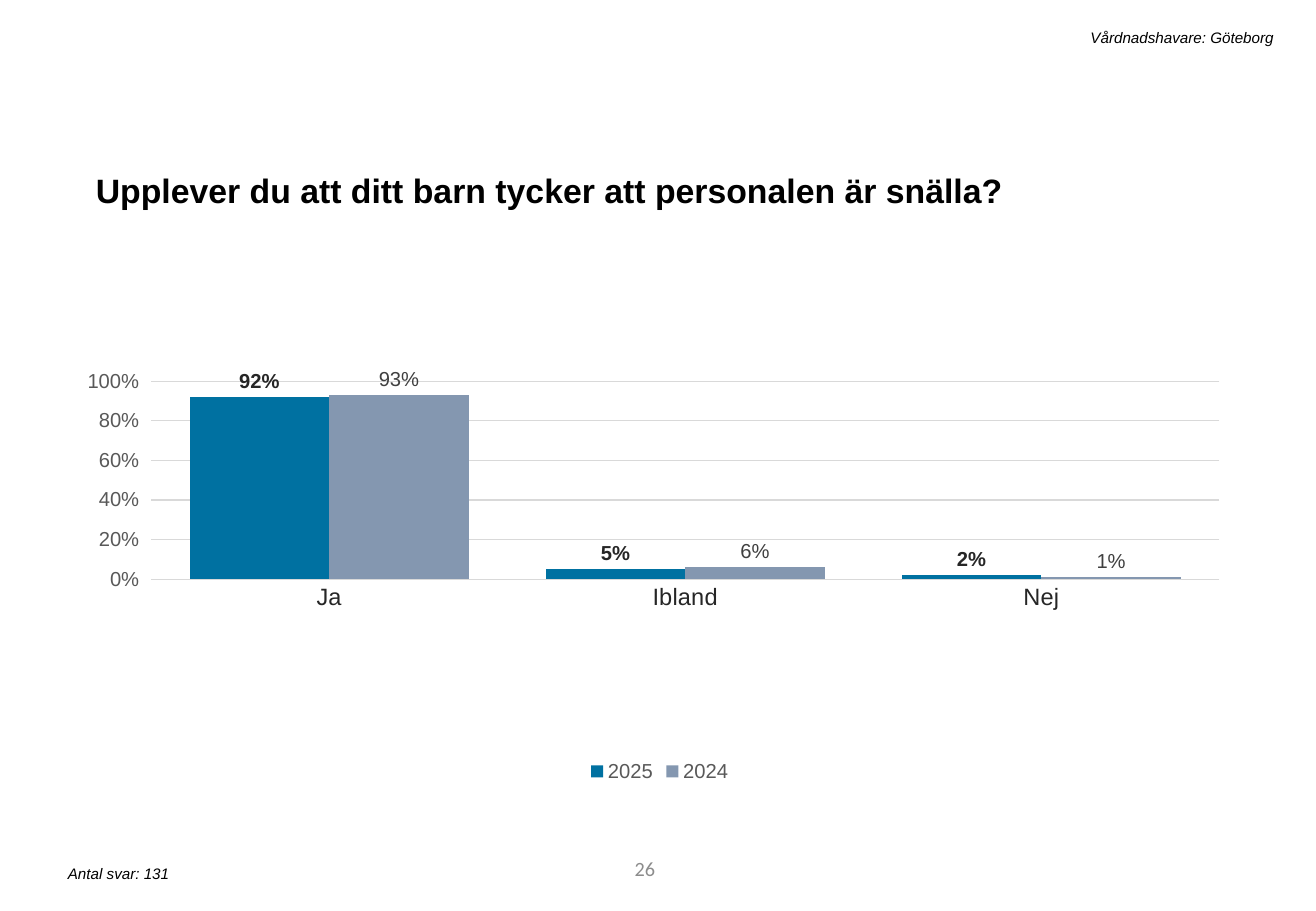
from dataclasses import dataclass

from lxml import etree
from pptx import Presentation
from pptx.chart.data import CategoryChartData
from pptx.dml.color import RGBColor
from pptx.enum.chart import XL_CHART_TYPE as ChartType
from pptx.enum.chart import XL_LABEL_POSITION as LabelPosition
from pptx.enum.chart import XL_LEGEND_POSITION as LegendPosition
from pptx.enum.chart import XL_TICK_MARK as TickMark
from pptx.enum.text import MSO_ANCHOR as Anchor
from pptx.enum.text import PP_ALIGN as Align
from pptx.oxml.ns import qn
from pptx.util import Inches, Pt


@dataclass(frozen=True)
class Theme:
    font: str = "Arial"
    number_font: str = "Calibri"
    black: str = "000000"
    dark: str = "262626"
    label: str = "404040"
    muted: str = "595959"
    page_number: str = "8C8C8C"
    grid: str = "D9D9D9"
    current_year: str = "0071A1"
    previous_year: str = "8497B0"
    title_size: int = 20
    category_size: int = 14
    chart_size: int = 12
    base_size: int = 10
    note_size: int = 9


THEME = Theme()
ANSWERS = ["Ja", "Ibland", "Nej"]
YEARS = [
    ("2025", [0.92, 0.05, 0.02], THEME.current_year, THEME.dark, True),
    ("2024", [0.93, 0.06, 0.01], THEME.previous_year, THEME.label, False),
]
PLOT_AREA = {"x": 0.054, "y": 0.154, "w": 0.937, "h": 0.413}


def style_font(font, size, color, name=THEME.font, bold=False, italic=False):
    font.name = name
    font.size = Pt(size)
    font.bold = bold
    font.italic = italic
    font.color.rgb = RGBColor.from_string(color)


def style_line(line):
    line.color.rgb = RGBColor.from_string(THEME.grid)
    line.width = Pt(0.75)


def add_text(page, area, text, size, color=THEME.black, align=Align.LEFT,
             anchor=Anchor.TOP, **style):
    box = page.shapes.add_textbox(*map(Inches, area))
    frame = box.text_frame
    frame.word_wrap = True
    frame.vertical_anchor = anchor
    para = frame.paragraphs[0]
    para.text = text
    para.alignment = align
    style_font(para.font, size, color, **style)
    return para


def place_plot(chart):
    plot_area = chart.plots[0]._element.getparent()
    for old_layout in plot_area.findall(qn("c:layout")):
        plot_area.remove(old_layout)
    layout = etree.Element(qn("c:layout"))
    plot_area.insert(0, layout)
    manual = etree.SubElement(layout, qn("c:manualLayout"))
    settings = {"layoutTarget": "inner", "xMode": "edge", "yMode": "edge", **PLOT_AREA}
    for tag, value in settings.items():
        etree.SubElement(manual, qn(f"c:{tag}")).set("val", str(value))


def style_axes(chart):
    answers = chart.category_axis
    answers.major_tick_mark = TickMark.NONE
    style_font(answers.tick_labels.font, THEME.category_size, THEME.dark)
    style_line(answers.format.line)

    shares = chart.value_axis
    shares.minimum_scale = 0
    shares.maximum_scale = 1
    shares.major_unit = 0.2
    shares.major_tick_mark = TickMark.OUTSIDE
    shares.tick_labels.number_format = "0%"
    shares.tick_labels.number_format_is_linked = False
    style_font(shares.tick_labels.font, THEME.chart_size, THEME.muted)
    shares.format.line.fill.background()
    style_line(shares.major_gridlines.format.line)


def style_series(series, fill, label_color, bold):
    series.format.fill.solid()
    series.format.fill.fore_color.rgb = RGBColor.from_string(fill)
    labels = series.data_labels
    labels.show_value = True
    labels.position = LabelPosition.OUTSIDE_END
    labels.number_format = "0%"
    labels.number_format_is_linked = False
    style_font(labels.font, THEME.chart_size, label_color, bold=bold)


def add_answer_chart(page, area):
    data = CategoryChartData(number_format="0%")
    data.categories = ANSWERS
    for year, shares, *_ in YEARS:
        data.add_series(year, shares)
    chart = page.shapes.add_chart(
        ChartType.COLUMN_CLUSTERED, *map(Inches, area), data).chart
    chart.has_title = False
    style_font(chart.font, THEME.base_size, THEME.black)
    chart.has_legend = True
    chart.legend.position = LegendPosition.BOTTOM
    chart.legend.include_in_layout = False
    style_font(chart.legend.font, THEME.chart_size, THEME.muted)
    style_axes(chart)
    place_plot(chart)
    plot = chart.plots[0]
    plot.gap_width = 55
    plot.overlap = 0
    plot.vary_by_categories = False
    for series, (_, _, fill, label_color, bold) in zip(plot.series, YEARS):
        style_series(series, fill, label_color, bold)


def main():
    deck = Presentation()
    deck.slide_width = Inches(10.83)
    deck.slide_height = Inches(7.5)
    page = deck.slides.add_slide(deck.slide_layouts[6])

    add_text(page, (3.05, 6.95, 2.44, 0.4), "26", THEME.chart_size,
             THEME.page_number, Align.RIGHT, Anchor.MIDDLE, name=THEME.number_font)
    title = add_text(page, (0.69, 1.28, 9.4, 0.47),
                     "Upplever du att ditt barn tycker att personalen är snälla?",
                     THEME.title_size, bold=True)
    title.line_spacing = 1.2
    title.space_before = Pt(10)
    add_text(page, (0.46, 7.07, 4.41, 0.25), "Antal svar: 131",
             THEME.note_size, italic=True)
    add_answer_chart(page, (0.72, 2.53, 9.4, 3.95))
    add_text(page, (1.72, 0.18, 8.86, 0.25), "Vårdnadshavare: Göteborg",
             THEME.note_size, align=Align.RIGHT, italic=True)

    deck.save("out.pptx")


if __name__ == "__main__":
    main()
